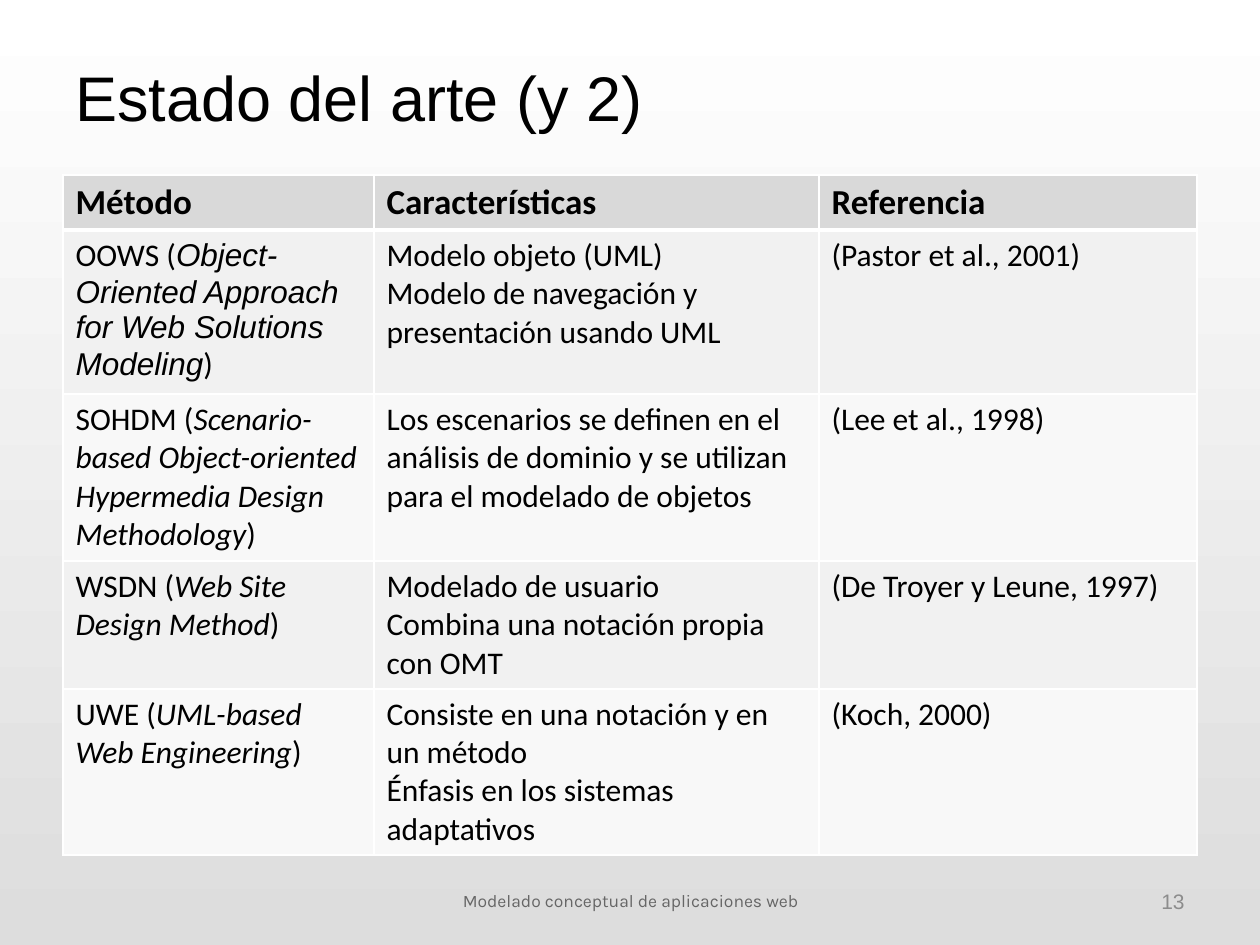
"""Build the slide that closes the state of the art on web modelling methods."""
from lxml.etree import SubElement
from pptx import Presentation
from pptx.dml.color import RGBColor
from pptx.enum.text import MSO_ANCHOR as Anchor, PP_ALIGN as Align
from pptx.oxml.ns import qn
from pptx.util import Pt

PX = 914400 // 126
COLORS = {
    "text": "000000", "number": "8C8C8C", "footer": "666666",
    "header": "D9D9D9", "odd": "F1F1F1", "even": "F8F8F8",
    "border": "FFFFFF", "top": "FFFFFF", "bottom": "DDDDDD",
}
LABELS = [
    ("Estado del arte (y 2)", (63, 18, 810, 157), "Arial", 36, "text", Align.LEFT),
    ("13", (903, 876, 294, 50), "Arial", 12, "number", Align.RIGHT),
    ("Modelado conceptual de aplicaciones web", (431, 876, 399, 50),
     "Karla", 10, "footer", Align.CENTER),
]
HEADERS = ["Método", "Características", "Referencia"]
METHODS = [
    ("OOWS", "Object-Oriented Approach for Web Solutions Modeling", "Arial",
     ["Modelo objeto (UML)", "Modelo de navegación y presentación usando UML"],
     "(Pastor et al., 2001)"),
    ("SOHDM", "Scenario-based Object-oriented Hypermedia Design Methodology", "Calibri",
     ["Los escenarios se definen en el análisis de dominio y se utilizan "
      "para el modelado de objetos"],
     "(Lee et al., 1998)"),
    ("WSDN", "Web Site Design Method", "Calibri",
     ["Modelado de usuario", "Combina una notación propia con OMT"],
     "(De Troyer y Leune, 1997)"),
    ("UWE", "UML-based Web Engineering", "Calibri",
     ["Consiste en una notación y en un método", "Énfasis en los sistemas adaptativos"],
     "(Koch, 2000)"),
]
TABLE_LEFT, TABLE_TOP = 63, 175
COLUMN_WIDTHS = [311, 445, 378]
ROW_HEIGHTS = [55, 160, 167, 128, 166]


def rgb(name):
    return RGBColor.from_string(COLORS[name])


def set_font(paragraph, name, size, color, bold=False):
    font = paragraph.font
    font.name, font.size, font.bold = name, Pt(size), bold
    font.color.rgb = rgb(color)


def add_label(slide, text, box, font, size, color, align):
    shape = slide.shapes.add_textbox(*(value * PX for value in box))
    frame = shape.text_frame
    frame.word_wrap = True
    frame.vertical_anchor = Anchor.MIDDLE
    paragraph = frame.paragraphs[0]
    paragraph.text = text
    paragraph.alignment = align
    set_font(paragraph, font, size, color)


def set_borders(cell, row):
    widths = {"lnL": 1, "lnR": 1, "lnT": 3 if row == 1 else 1, "lnB": 3 if row == 0 else 1}
    properties = cell._tc.get_or_add_tcPr()
    for side, width in widths.items():
        line = SubElement(properties, qn(f"a:{side}"), w=str(Pt(width)))
        fill = SubElement(line, qn("a:solidFill"))
        SubElement(fill, qn("a:srgbClr"), val=COLORS["border"])


def fill_cell(cell, row, paragraphs):
    set_borders(cell, row)
    cell.fill.solid()
    cell.fill.fore_color.rgb = rgb("header" if row == 0 else "odd" if row % 2 else "even")
    frame = cell.text_frame
    for index, runs in enumerate(paragraphs):
        paragraph = frame.add_paragraph() if index else frame.paragraphs[0]
        set_font(paragraph, "Calibri", 18 if row else 20, "text", bold=row == 0)
        for text, italic_font in runs:
            run = paragraph.add_run()
            run.text = text
            if italic_font:
                run.font.italic = True
                run.font.name = italic_font


def add_methods_table(slide):
    rows = [[[[(header, None)]] for header in HEADERS]]
    for acronym, meaning, font, features, reference in METHODS:
        name = [(f"{acronym} (", None), (meaning, font), (")", None)]
        rows.append([[name], [[(feature, None)] for feature in features], [[(reference, None)]]])
    table = slide.shapes.add_table(
        len(rows), len(HEADERS), TABLE_LEFT * PX, TABLE_TOP * PX,
        sum(COLUMN_WIDTHS) * PX, sum(ROW_HEIGHTS) * PX).table
    for column, width in zip(table.columns, COLUMN_WIDTHS):
        column.width = width * PX
    for index, (row, height) in enumerate(zip(table.rows, ROW_HEIGHTS)):
        row.height = height * PX
        for cell, paragraphs in zip(row.cells, rows[index]):
            fill_cell(cell, index, paragraphs)


def main():
    presentation = Presentation()
    presentation.slide_width, presentation.slide_height = 1260 * PX, 945 * PX
    slide = presentation.slides.add_slide(presentation.slide_layouts[6])
    background = slide.background.fill
    background.gradient()
    background.gradient_angle = 270
    for stop, position, color in zip(background.gradient_stops, (0, 1), ("top", "bottom")):
        stop.position = position
        stop.color.rgb = rgb(color)
    for label in LABELS:
        add_label(slide, *label)
    add_methods_table(slide)
    presentation.save("out.pptx")


if __name__ == "__main__":
    main()
